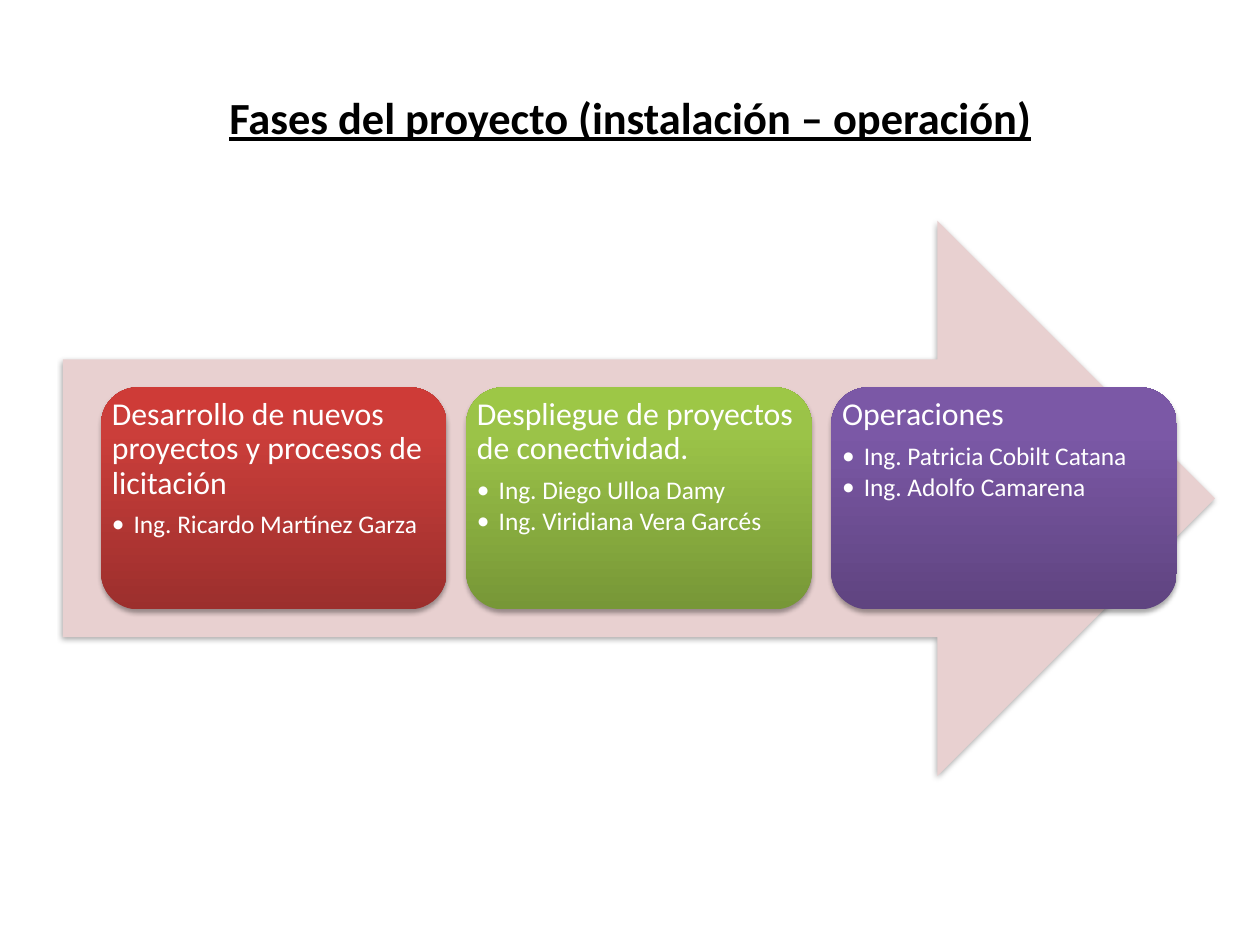
import copy

import lxml.etree
import pptx
import pptx.dml.color
import pptx.enum.shapes
import pptx.enum.text
import pptx.oxml.ns
import pptx.util

Cm, Inches, Pt = pptx.util.Cm, pptx.util.Inches, pptx.util.Pt
RGBColor = pptx.dml.color.RGBColor
qn = pptx.oxml.ns.qn

BLACK = RGBColor(0x00, 0x00, 0x00)
WHITE = RGBColor(0xFF, 0xFF, 0xFF)
PINK = RGBColor(0xE8, 0xD0, 0xD0)
REDS = [RGBColor(0x9C, 0x2F, 0x2D), RGBColor(0xCB, 0x3E, 0x3A), RGBColor(0xCE, 0x3B, 0x37)]
GREENS = [RGBColor(0x77, 0x97, 0x37), RGBColor(0x9B, 0xC3, 0x48), RGBColor(0x9D, 0xC7, 0x46)]
PURPLES = [RGBColor(0x5F, 0x44, 0x80), RGBColor(0x7B, 0x58, 0xA6), RGBColor(0x7C, 0x57, 0xA8)]
GRADIENT_POSITIONS = (0, 0.8, 1)
FONT = "Calibri"

TITLE = "Fases del proyecto (instalación – operación)"
PHASES = [
    ("Desarrollo de nuevos proyectos y procesos de licitación",
     ["Ing. Ricardo Martínez Garza"], REDS),
    ("Despliegue de proyectos de conectividad.",
     ["Ing. Diego Ulloa Damy", "Ing. Viridiana Vera Garcés"], GREENS),
    ("Operaciones",
     ["Ing. Patricia Cobilt Catana", "Ing. Adolfo Camarena"], PURPLES),
]

SLIDE_WIDTH, SLIDE_HEIGHT = Cm(28), Cm(21)
MARGIN = Inches(0.55)
ARROW_TOP, ARROW_WIDTH, ARROW_HEIGHT = Inches(1.93), Inches(10.08), Inches(4.86)
CARD_WIDTH, CARD_HEIGHT = 0.3 * ARROW_WIDTH, 0.4 * ARROW_HEIGHT
CARD_GAP = Inches(0.17)
BULLET_INDENT = Inches(0.19)


def add_soft_shadow(shape):
    shape.shadow.inherit = False
    effects = shape._element.spPr.find(qn("a:effectLst"))
    shadow = lxml.etree.SubElement(
        effects, qn("a:outerShdw"), blurRad=str(Pt(3.1)), dist=str(Pt(1.8)),
        dir="5400000", rotWithShape="0")
    color = lxml.etree.SubElement(shadow, qn("a:srgbClr"), val=str(BLACK))
    lxml.etree.SubElement(color, qn("a:alpha"), val="35000")


def add_plain_shape(slide, kind, left, top, width, height):
    shape = slide.shapes.add_shape(kind, round(left), round(top), round(width), round(height))
    shape.line.fill.background()
    add_soft_shadow(shape)
    return shape


def fill_gradient(shape, colors):
    """Fill from the bottom up with one stop per colour."""
    shape.fill.gradient()
    shape.fill.gradient_angle = 90
    stops = shape._element.spPr.find(".//" + qn("a:gsLst"))
    stops.append(copy.deepcopy(stops[-1]))
    for stop, position, color in zip(shape.fill.gradient_stops, GRADIENT_POSITIONS, colors):
        stop.position = position
        stop.color.rgb = color


def add_bullet(paragraph):
    paragraph.level = 1
    properties = paragraph._p.get_or_add_pPr()
    properties.set("marL", str(BULLET_INDENT))
    properties.set("indent", str(-BULLET_INDENT))
    lxml.etree.SubElement(properties, qn("a:buFont"), typeface=FONT)
    lxml.etree.SubElement(properties, qn("a:buChar"), char="•")


def style_text(paragraph, text, size, color, alignment):
    paragraph.text = text
    paragraph.alignment = alignment
    paragraph.font.name = FONT
    paragraph.font.size = Pt(size)
    paragraph.font.color.rgb = color


def add_title(slide):
    box = slide.shapes.add_textbox(
        MARGIN, round(0.04 * SLIDE_HEIGHT),
        SLIDE_WIDTH - 2 * MARGIN, round(SLIDE_HEIGHT / 6))
    frame = box.text_frame
    frame.word_wrap = True
    frame.vertical_anchor = pptx.enum.text.MSO_ANCHOR.MIDDLE
    paragraph = frame.paragraphs[0]
    style_text(paragraph, TITLE, 28, BLACK, pptx.enum.text.PP_ALIGN.CENTER)
    paragraph.font.bold = True
    paragraph.font.underline = True


def add_card(slide, left, heading, people, colors):
    card = add_plain_shape(
        slide, pptx.enum.shapes.MSO_SHAPE.ROUNDED_RECTANGLE, left,
        ARROW_TOP + (ARROW_HEIGHT - CARD_HEIGHT) / 2, CARD_WIDTH, CARD_HEIGHT)
    fill_gradient(card, colors)
    frame = card.text_frame
    frame.word_wrap = True
    frame.vertical_anchor = pptx.enum.text.MSO_ANCHOR.TOP
    frame.margin_left = frame.margin_right = frame.margin_top = frame.margin_bottom = 0
    for index, text in enumerate([heading] + people):
        paragraph = frame.add_paragraph() if index else frame.paragraphs[0]
        if index:
            add_bullet(paragraph)
        style_text(paragraph, text, 16 if index else 20, WHITE, pptx.enum.text.PP_ALIGN.LEFT)
        paragraph.line_spacing = 0.9
        paragraph.space_after = Pt(2.4 if index else 7)


def main():
    presentation = pptx.Presentation()
    presentation.slide_width = SLIDE_WIDTH
    presentation.slide_height = SLIDE_HEIGHT
    slide = presentation.slides.add_slide(presentation.slide_layouts[6])

    add_title(slide)
    arrow = add_plain_shape(
        slide, pptx.enum.shapes.MSO_SHAPE.RIGHT_ARROW,
        MARGIN, ARROW_TOP, ARROW_WIDTH, ARROW_HEIGHT)
    arrow.fill.solid()
    arrow.fill.fore_color.rgb = PINK

    step = CARD_WIDTH + CARD_GAP
    row_width = len(PHASES) * step - CARD_GAP
    first_left = MARGIN + (ARROW_WIDTH - row_width) / 2
    for column, phase in enumerate(PHASES):
        add_card(slide, first_left + column * step, *phase)

    presentation.save("out.pptx")


if __name__ == "__main__":
    main()
